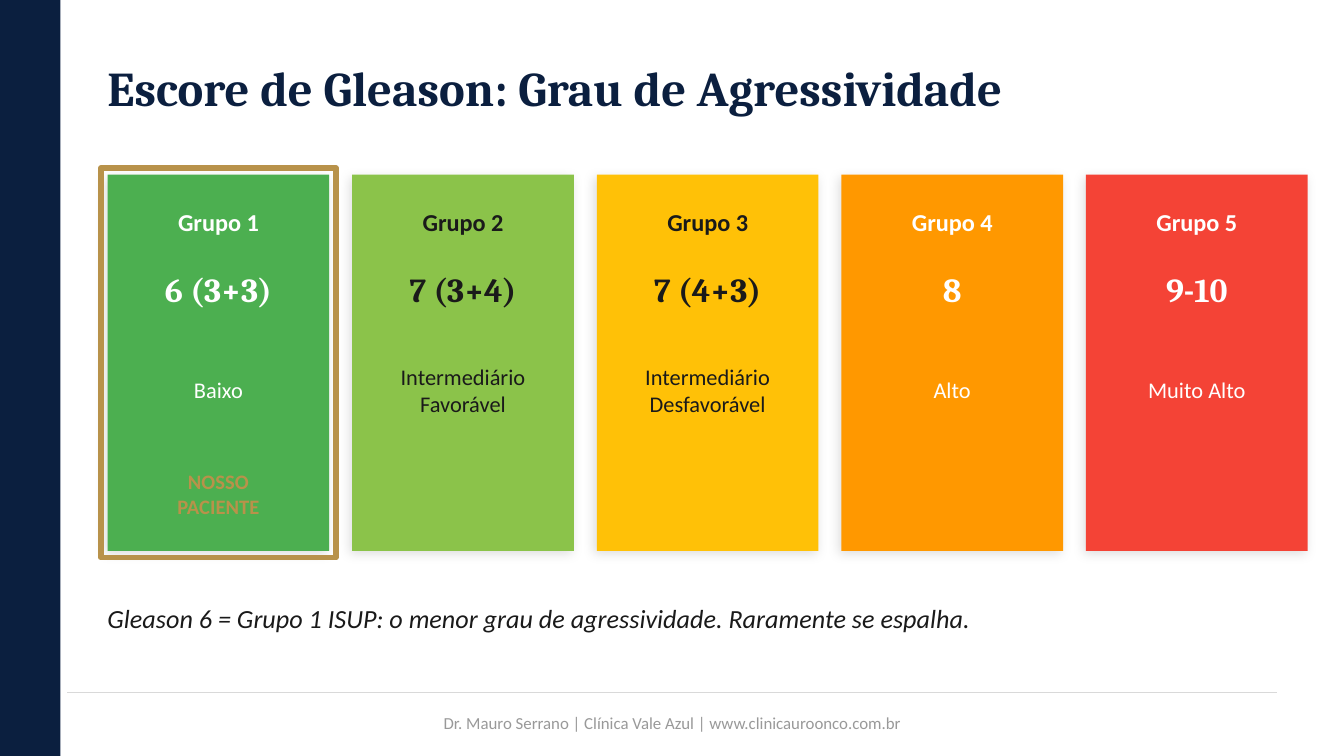
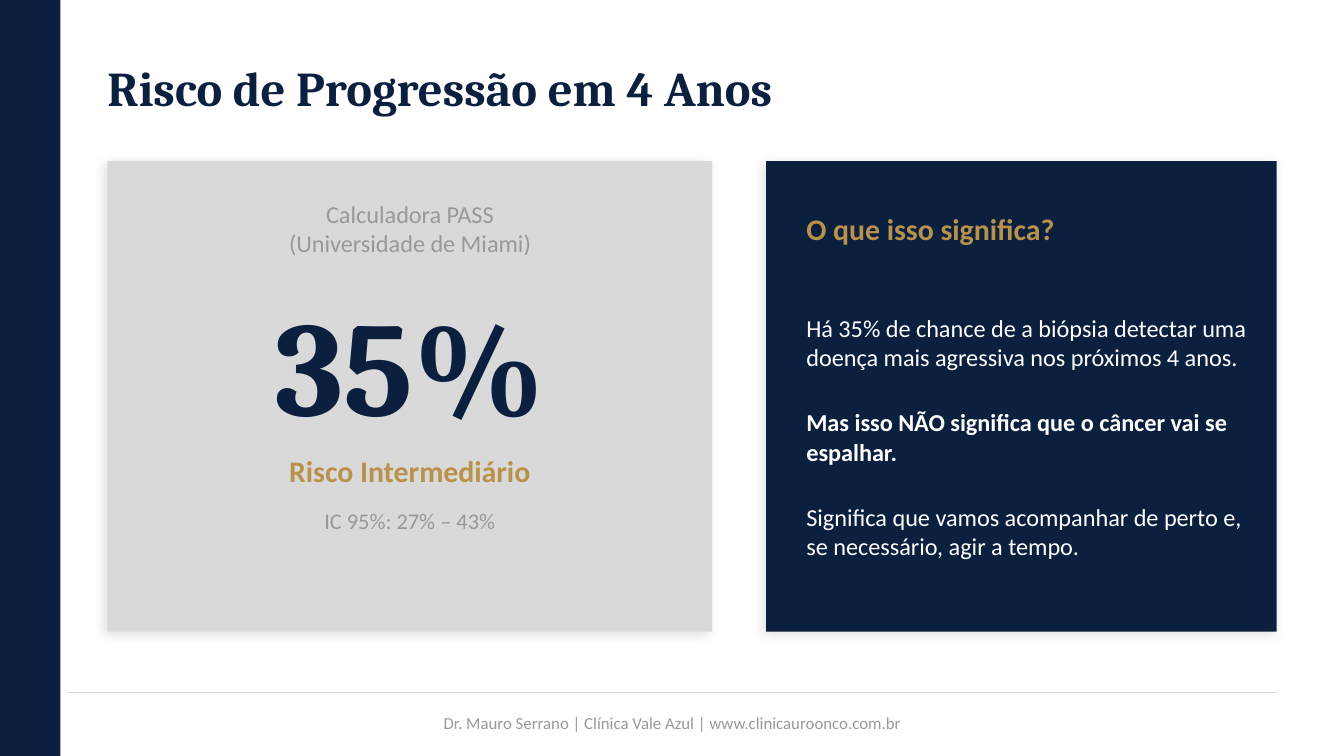
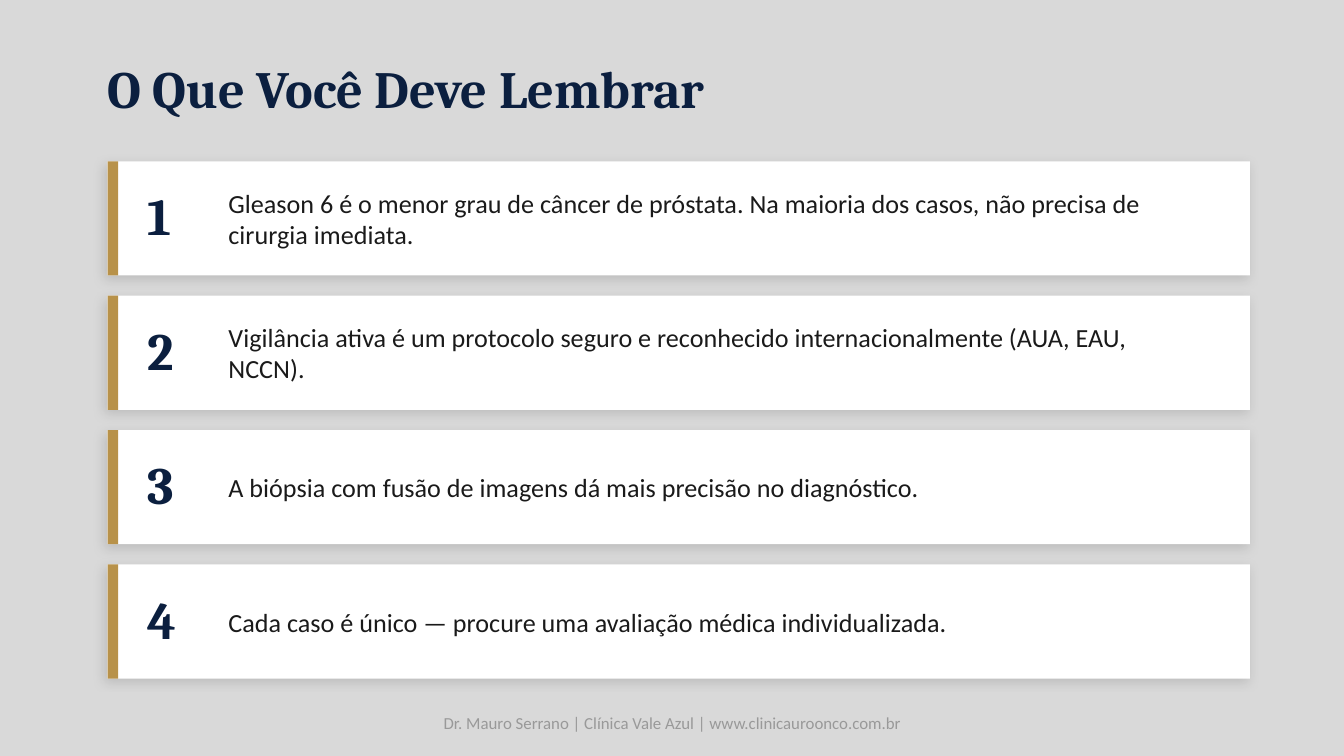
from lxml import etree
from pptx import Presentation
from pptx.dml.color import RGBColor
from pptx.enum.shapes import MSO_CONNECTOR, MSO_SHAPE
from pptx.enum.text import MSO_ANCHOR, PP_ALIGN
from pptx.oxml.ns import qn
from pptx.util import Pt

RECT = MSO_SHAPE.RECTANGLE
STRAIGHT = MSO_CONNECTOR.STRAIGHT
MIDDLE = MSO_ANCHOR.MIDDLE
LEFT, CENTER = PP_ALIGN.LEFT, PP_ALIGN.CENTER

NAVY = RGBColor(0x0B, 0x1F, 0x3F)
GOLD = RGBColor(0xB8, 0x92, 0x4A)
WHITE = RGBColor(0xFF, 0xFF, 0xFF)
INK = RGBColor(0x1A, 0x1A, 0x1A)
SILVER = RGBColor(0xD9, 0xD9, 0xD9)
GRAY = RGBColor(0x99, 0x99, 0x99)
GREEN = RGBColor(0x4C, 0xAF, 0x50)
LIME = RGBColor(0x8B, 0xC3, 0x4A)
AMBER = RGBColor(0xFF, 0xC1, 0x07)
ORANGE = RGBColor(0xFF, 0x98, 0x00)
RED = RGBColor(0xF4, 0x43, 0x36)

BODY, SERIF = "Calibri", "Cambria"
PX = 4572  # EMU per px, 200 px to the inch
WIDTH, HEIGHT = 2000, 1125
MARGIN = 160

# Content
FOOTER = "Dr. Mauro Serrano | Clínica Vale Azul | www.clinicauroonco.com.br"

GLEASON_TITLE = "Escore de Gleason: Grau de Agressividade"
GROUPS = [  # score, risk, card colour, text colour
    ("6 (3+3)", ["Baixo"], GREEN, WHITE),
    ("7 (3+4)", ["Intermediário", "Favorável"], LIME, INK),
    ("7 (4+3)", ["Intermediário", "Desfavorável"], AMBER, INK),
    ("8", ["Alto"], ORANGE, WHITE),
    ("9-10", ["Muito Alto"], RED, WHITE),
]
PATIENT_GROUP = 1
PATIENT_LABEL = ["NOSSO", "PACIENTE"]
GLEASON_NOTE = "Gleason 6 = Grupo 1 ISUP: o menor grau de agressividade. Raramente se espalha."

RISK_TITLE = "Risco de Progressão em 4 Anos"
RISK_LINES = [  # top, height, paragraphs, format
    (280, 120, ["Calculadora PASS", "(Universidade de Miami)"], dict(size=13, color=GRAY)),
    (420, 240, ["35%"], dict(size=72, color=NAVY, font=SERIF, bold=True)),
    (660, 80, ["Risco Intermediário"], dict(size=16, color=GOLD, bold=True)),
    (740, 70, ["IC 95%: 27% – 43%"], dict(size=12, color=GRAY)),
]
MEANING_TITLE = "O que isso significa?"
MEANING = [
    "Há 35% de chance de a biópsia detectar uma doença mais agressiva nos próximos 4 anos.",
    "Mas isso NÃO significa que o câncer vai se espalhar.",
    "Significa que vamos acompanhar de perto e, se necessário, agir a tempo.",
]

RECALL_TITLE = "O Que Você Deve Lembrar"
RECALL = [
    "Gleason 6 é o menor grau de câncer de próstata. Na maioria dos casos, não precisa de cirurgia imediata.",
    "Vigilância ativa é um protocolo seguro e reconhecido internacionalmente (AUA, EAU, NCCN).",
    "A biópsia com fusão de imagens dá mais precisão no diagnóstico.",
    "Cada caso é único — procure uma avaliação médica individualizada.",
]


def emu(*lengths):
    return [n * PX for n in lengths]


def add_text(s, box, paragraphs, size=14, color=INK, font=BODY, bold=False,
             italic=False, align=LEFT, gap=0, bold_at=None):
    tf = s.shapes.add_textbox(*emu(*box)).text_frame
    tf.word_wrap = True
    tf.vertical_anchor = MIDDLE
    tf.margin_left = tf.margin_top = tf.margin_right = tf.margin_bottom = 0
    for i, text in enumerate(paragraphs):
        p = tf.paragraphs[0] if i == 0 else tf.add_paragraph()
        p.alignment = align
        if i and gap:
            p.space_before = Pt(gap)
        r = p.add_run()
        r.text = text
        r.font.size, r.font.name = Pt(size), font
        r.font.bold, r.font.italic = bold or i == bold_at, italic
        r.font.color.rgb = color


def add_rect(s, box, fill=None, line=None, shadow=False):
    sp = s.shapes.add_shape(RECT, *emu(*box))
    sp.shadow.inherit = False
    if fill is None:
        sp.fill.background()
    else:
        sp.fill.solid()
        sp.fill.fore_color.rgb = fill
    if line is None:
        sp.line.fill.background()
    else:
        sp.line.color.rgb = line
        sp.line.width = Pt(3)
    if shadow:
        effects = sp._element.spPr.find(qn("a:effectLst"))
        outer = etree.SubElement(effects, qn("a:outerShdw"), blurRad=str(Pt(6)),
                                 dist=str(Pt(2)), dir=str(135 * 60000),
                                 algn="bl", rotWithShape="0")
        black = etree.SubElement(outer, qn("a:srgbClr"), val="000000")
        etree.SubElement(black, qn("a:alpha"), val="12000")


def new_slide(prs, title, background=WHITE, band=True, title_size=26):
    s = prs.slides.add_slide(prs.slide_layouts[6])
    s.background.fill.solid()
    s.background.fill.fore_color.rgb = background
    if band:
        add_rect(s, (0, 0, 90, HEIGHT), NAVY)
    add_text(s, (MARGIN, 60, 1700, 140), [title], size=title_size, color=NAVY,
             font=SERIF, bold=True)
    return s


def add_footer(s):
    rule = s.shapes.add_connector(STRAIGHT, *emu(100, 1030, 1900, 1030))
    rule.line.color.rgb = SILVER
    rule.line.width = Pt(0.5)
    etree.SubElement(rule._element.spPr, qn("a:effectLst"))
    add_text(s, (100, 1040, 1800, 70), [FOOTER], size=9, color=GRAY, align=CENTER)


def gleason_slide(prs):
    s = new_slide(prs, GLEASON_TITLE)
    top, width, height, pitch, frame = 260, 330, 560, 364, 10
    for i, (score, risk, fill, color) in enumerate(GROUPS):
        x = MARGIN + i * pitch
        add_rect(s, (x, top, width, height), fill, shadow=True)
        add_text(s, (x, 290, width, 80), [f"Grupo {i + 1}"], size=13, color=color,
                 bold=True, align=CENTER)
        add_text(s, (x, 380, width, 100), [score], size=18, color=color,
                 font=SERIF, bold=True, align=CENTER)
        add_text(s, (x, 520, width, 120), risk, size=12, color=color, align=CENTER)
        if i + 1 == PATIENT_GROUP:
            add_rect(s, (x - frame, top - frame, width + 2 * frame, height + 2 * frame),
                     line=GOLD)
            add_text(s, (x, 680, width, 110), PATIENT_LABEL, size=11, color=GOLD,
                     bold=True, align=CENTER)
    add_text(s, (MARGIN, 880, 1700, 80), [GLEASON_NOTE], italic=True)
    add_footer(s)


def risk_slide(prs):
    s = new_slide(prs, RISK_TITLE)
    # Calculator panel
    add_rect(s, (MARGIN, 240, 900, 700), SILVER, shadow=True)
    for top, height, paragraphs, style in RISK_LINES:
        add_text(s, (200, top, 820, height), paragraphs, align=CENTER, **style)
    # Meaning panel
    add_rect(s, (1140, 240, 760, 700), NAVY, shadow=True)
    add_text(s, (1200, 300, 660, 80), [MEANING_TITLE], size=16, color=GOLD, bold=True)
    add_text(s, (1200, 420, 660, 460), MEANING, size=13, color=WHITE, gap=19.5, bold_at=1)
    add_footer(s)


def recall_slide(prs):
    s = new_slide(prs, RECALL_TITLE, background=SILVER, band=False, title_size=28)
    for i, message in enumerate(RECALL):
        y = 240 + i * 200
        add_rect(s, (MARGIN, y, 1700, 170), WHITE, shadow=True)
        add_rect(s, (MARGIN, y, 16, 170), GOLD)
        add_text(s, (220, y + 20, 100, 120), [str(i + 1)], size=28, color=NAVY,
                 font=SERIF, bold=True)
        add_text(s, (340, y + 20, 1460, 130), [message])
    add_footer(s)


def main():
    prs = Presentation()
    prs.slide_width, prs.slide_height = emu(WIDTH, HEIGHT)
    gleason_slide(prs)
    risk_slide(prs)
    recall_slide(prs)
    prs.save("out.pptx")


if __name__ == "__main__":
    main()
